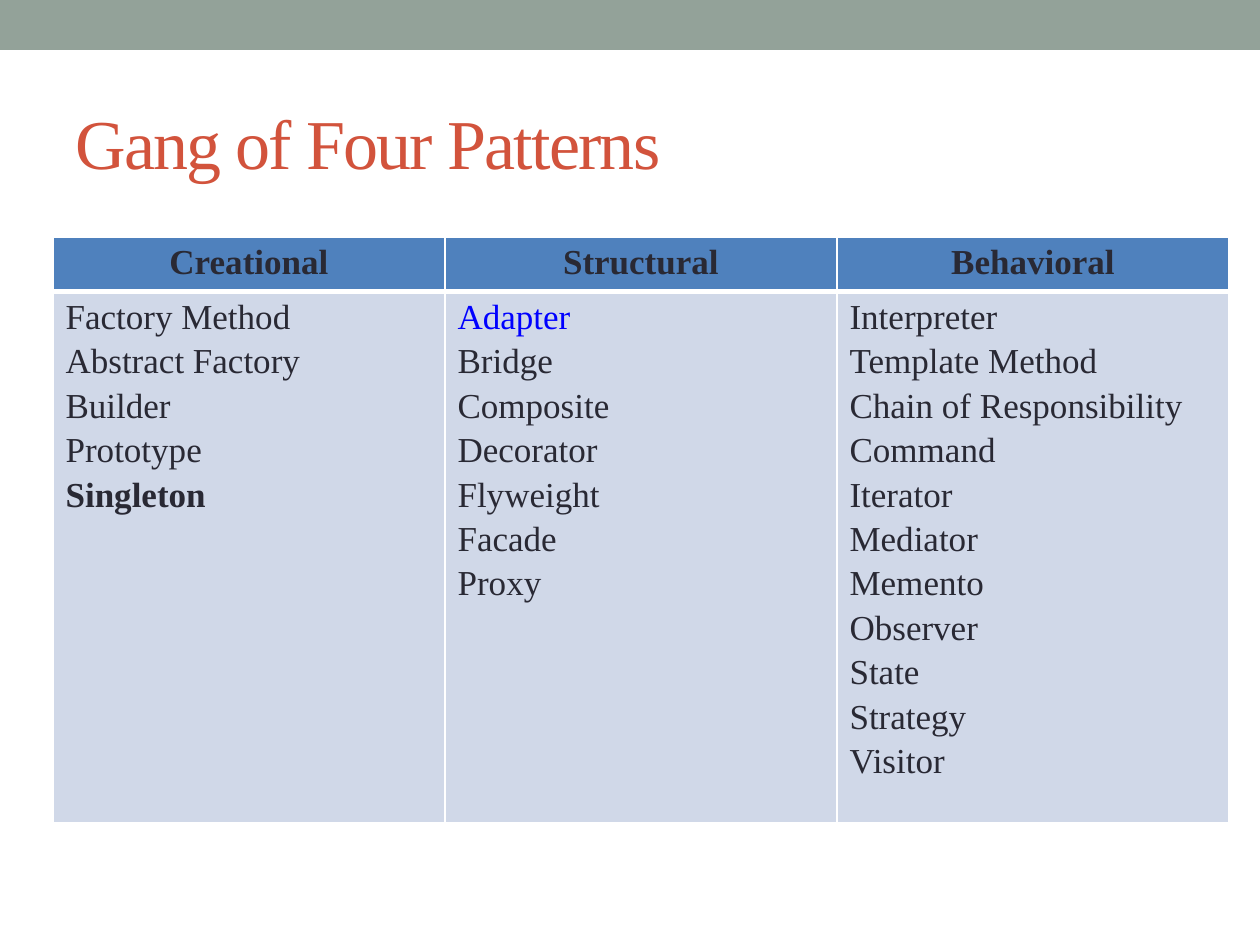
from dataclasses import dataclass

from lxml import etree
from pptx import Presentation
from pptx import util as u
from pptx.dml.color import RGBColor
from pptx.enum import shapes, text
from pptx.oxml.ns import qn

SCALE = u.Inches(1) // 126


@dataclass(frozen=True)
class Theme:
    """Colours, font and type sizes of the slide."""
    font: str = "Times New Roman"
    band: str = "93A299"
    title: str = "D2533C"
    ink: str = "292934"
    accent: str = "0000FF"
    header: str = "4F81BD"
    body: str = "D0D8E8"
    rule: str = "FFFFFF"
    title_size: int = 40
    table_size: int = 20
    gap: float = 3.2


THEME = Theme()

PATTERNS = {
    "Creational": ["Factory Method", "Abstract Factory", "Builder", "Prototype", "Singleton"],
    "Structural": ["Adapter", "Bridge", "Composite", "Decorator", "Flyweight", "Facade", "Proxy"],
    "Behavioral": ["Interpreter", "Template Method", "Chain of Responsibility", "Command",
                   "Iterator", "Mediator", "Memento", "Observer", "State", "Strategy", "Visitor"],
}
EMPHASIS = {"Singleton": {"bold": True}, "Adapter": {"color": THEME.accent}}


def px(*lengths):
    """Turn pixel lengths into EMU."""
    return [u.Emu(length * SCALE) for length in lengths]


def write(paragraph, words, size=THEME.table_size, color=THEME.ink, bold=False,
          align=text.PP_ALIGN.LEFT, before=0, tracking=None):
    """Put formatted words into a paragraph."""
    paragraph.alignment = align
    paragraph.space_before = u.Pt(before)
    run = paragraph.add_run()
    run.text = words
    run.font.name = THEME.font
    run.font.size = u.Pt(size)
    run.font.bold = bold
    run.font.color.rgb = RGBColor.from_string(color)
    if tracking is not None:
        run.font._element.set("spc", str(tracking * 100))


def add_band(slide):
    """Draw the plain band across the top."""
    band = slide.shapes.add_shape(shapes.MSO_SHAPE.RECTANGLE, *px(0, 0, 1260, 50))
    band.shadow.inherit = False
    band.fill.solid()
    band.fill.fore_color.rgb = RGBColor.from_string(THEME.band)
    band.line.fill.background()


def add_title(slide, words):
    """Write the slide title."""
    frame = slide.shapes.add_textbox(*px(63, 73, 1134, 136)).text_frame
    frame.word_wrap = True
    frame.vertical_anchor = text.MSO_ANCHOR.MIDDLE
    write(frame.paragraphs[0], words, size=THEME.title_size, color=THEME.title, tracking=-1)


def style_cell(cell, fill, top=1, bottom=1):
    """Fill a cell and rule its four sides."""
    properties = cell._tc.get_or_add_tcPr()
    for side, width in {"L": 1, "R": 1, "T": top, "B": bottom}.items():
        line = etree.SubElement(properties, qn(f"a:ln{side}"), w=str(u.Pt(width)))
        solid = etree.SubElement(line, qn("a:solidFill"))
        etree.SubElement(solid, qn("a:srgbClr"), val=THEME.rule)
    cell.fill.solid()
    cell.fill.fore_color.rgb = RGBColor.from_string(fill)


def add_patterns(slide, groups):
    """Build the table with one column per pattern group."""
    table = slide.shapes.add_table(2, len(groups), *px(53, 237, 1176, 561)).table
    table.rows[0].height, table.rows[1].height = px(52, 509)
    for column, (heading, names) in enumerate(groups.items()):
        header, body = table.cell(0, column), table.cell(1, column)
        style_cell(header, THEME.header, bottom=3)
        style_cell(body, THEME.body, top=3)
        write(header.text_frame.paragraphs[0], heading, bold=True,
              align=text.PP_ALIGN.CENTER, before=THEME.gap)
        frame = body.text_frame
        for index, name in enumerate(names):
            paragraph = frame.add_paragraph() if index else frame.paragraphs[0]
            write(paragraph, name, before=THEME.gap, **EMPHASIS.get(name, {}))


def main():
    """Build and save the slide."""
    deck = Presentation()
    deck.slide_width, deck.slide_height = px(1260, 945)
    slide = deck.slides.add_slide(deck.slide_layouts[6])
    add_band(slide)
    add_title(slide, "Gang of Four Patterns")
    add_patterns(slide, PATTERNS)
    deck.save("out.pptx")


if __name__ == "__main__":
    main()
